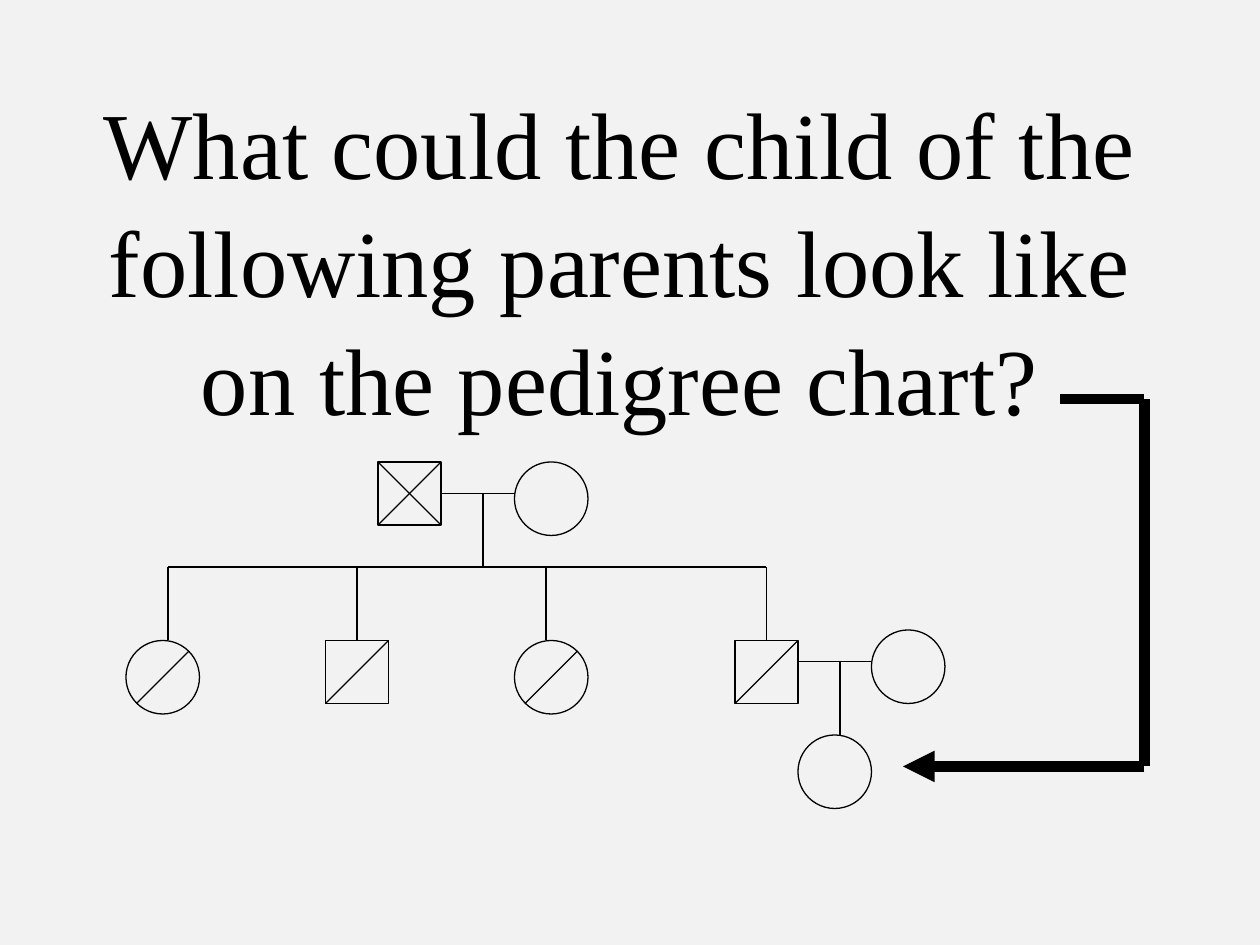
from pptx import Presentation as Deck
from pptx.dml.color import RGBColor as Rgb
from pptx.enum.shapes import MSO_CONNECTOR as Conn, MSO_SHAPE as Kind
from pptx.enum.text import MSO_ANCHOR as Anchor, PP_ALIGN as Align
from pptx.oxml.ns import qn
from pptx.util import Inches, Pt
from lxml.etree import SubElement as Sub
from collections import namedtuple

Theme = namedtuple("Theme", "back ink font size thin thick")
theme = Theme(Rgb(0xF2, 0xF2, 0xF2), Rgb(0, 0, 0), "Times New Roman",
              Pt(54), Pt(0.75), Pt(6))

# Grid of 120 columns by 90 rows, twelve cells to the inch
cell = Inches(1) // 12
BOX, RING = 6, 7

deck = Deck()
deck.slide_width, deck.slide_height = 120 * cell, 90 * cell
slide = deck.slides.add_slide(deck.slide_layouts[6])
slide.background.fill.solid()
slide.background.fill.fore_color.rgb = theme.back


def person(kind, col, row):
    size = BOX if kind == Kind.RECTANGLE else RING
    shape = slide.shapes.add_shape(
        kind, col * cell, row * cell, size * cell, size * cell)
    shape.shadow.inherit = False
    shape.fill.background()
    shape.line.color.rgb = theme.ink
    shape.line.width = theme.thin


def rule(x1, y1, x2, y2, width=theme.thin):
    line = slide.shapes.add_connector(
        Conn.STRAIGHT, x1 * cell, y1 * cell, x2 * cell, y2 * cell)
    line.line.color.rgb = theme.ink
    line.line.width = width
    Sub(line._element.spPr, qn("a:effectLst"))
    return line


# Title
title = slide.shapes.add_textbox(8 * cell, 17 * cell, 102 * cell, 15 * cell)
frame = title.text_frame
frame.word_wrap = True
frame.vertical_anchor = Anchor.MIDDLE
para = frame.paragraphs[0]
para.text = ("What could the child of the following parents "
             "look like on the pedigree chart?")
para.alignment = Align.CENTER
para.line_spacing = 1.04
para.font.name, para.font.size = theme.font, theme.size
para.font.color.rgb = theme.ink

# People: males are squares, females are circles
for col, row in [(36, 44), (31, 61), (70, 61)]:
    person(Kind.RECTANGLE, col, row)
for col, row in [(49, 44), (12, 61), (49, 61), (83, 60), (76, 70)]:
    person(Kind.OVAL, col, row)

# Couples, each with a line of descent from the middle
for left, right, mid, row in [(42, 49, 46, 47), (76, 83, 80, 63)]:
    rule(left, row, right, row)
    rule(mid, row, mid, row + 7)

# Sibling bar and drops
drops = [16, 34, 52, 73]
rule(drops[0], 54, drops[-1], 54)
for col in drops:
    rule(col, 54, col, 61)

# Trait marks: a cross for the father, one slash for each child
rule(36, 44, 42, 50)
for col, low, span in [(36, 50, 6), (31, 67, 6), (70, 67, 6),
                       (13, 67, 5), (50, 67, 5)]:
    rule(col, low, col + span, low - span)

# Thick arrow from the question to the child
rule(101, 38, 109, 38, theme.thick)
rule(109, 73, 109, 38, theme.thick)
arrow = rule(109, 73, 86, 73, theme.thick)
Sub(arrow.line._get_or_add_ln(), qn("a:tailEnd"), type="triangle")

deck.save("out.pptx")
